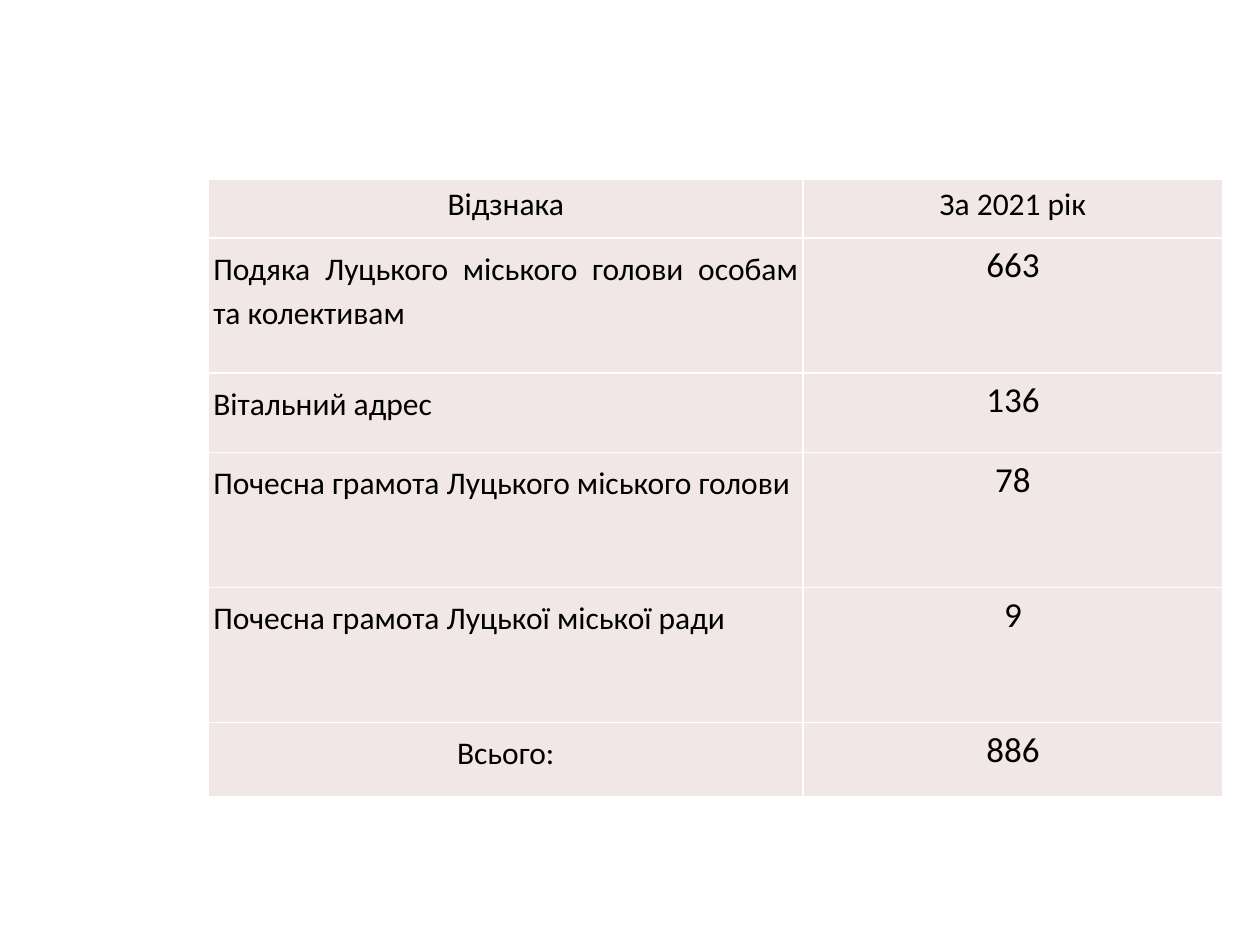
from lxml.etree import SubElement
from pptx import Presentation
from pptx.dml.color import RGBColor
from pptx.enum.text import PP_ALIGN as Align
from pptx.oxml.ns import qn
from pptx.util import Cm, Pt

COLORS = {"cell": "F1E7E7", "border": "FFFFFF", "text": "000000"}
COLUMN_WIDTHS = [11.99, 8.46]
ROW_HEIGHTS = [1.19, 2.72, 1.6, 2.72, 2.72, 1.5]
AWARDS = [
    ("Відзнака", "За 2021 рік"),
    ("Подяка Луцького міського голови особам та колективам", "663"),
    ("Вітальний адрес", "136"),
    ("Почесна грамота Луцького міського голови", "78"),
    ("Почесна грамота Луцької міської ради", "9"),
    ("Всього:", "886"),
]


def add_borders(cell):
    """Draw the four cell edges; they must come before the fill."""
    properties = cell._tc.get_or_add_tcPr()
    for side in ("a:lnL", "a:lnR", "a:lnT", "a:lnB"):
        line = SubElement(properties, qn(side), w=str(Pt(0.96)))
        fill = SubElement(line, qn("a:solidFill"))
        SubElement(fill, qn("a:srgbClr"), val=COLORS["border"])


# Page
deck = Presentation()
deck.slide_width, deck.slide_height = Cm(25.4), Cm(19.05)
page = deck.slides.add_slide(deck.slide_layouts[6])

# Table grid
table = page.shapes.add_table(
    len(AWARDS), len(COLUMN_WIDTHS), Cm(4.2), Cm(3.61),
    Cm(sum(COLUMN_WIDTHS)), Cm(sum(ROW_HEIGHTS))).table
table.first_row = table.horz_banding = False
for column, width in zip(table.columns, COLUMN_WIDTHS):
    column.width = Cm(width)
for row, height in zip(table.rows, ROW_HEIGHTS):
    row.height = Cm(height)

# Award names and counts
last_row = len(AWARDS) - 1
for row_index, texts in enumerate(AWARDS):
    for column_index, text in enumerate(texts):
        is_header = row_index == 0
        is_name = column_index == 0
        cell = table.cell(row_index, column_index)
        cell.margin_left = cell.margin_right = Cm(0.1)
        cell.margin_top = cell.margin_bottom = Cm(0.13)
        add_borders(cell)
        cell.fill.solid()
        cell.fill.fore_color.rgb = RGBColor.from_string(COLORS["cell"])

        cell.text = text
        para = cell.text_frame.paragraphs[0]
        para.alignment = Align.CENTER
        if is_name and not is_header:
            para.line_spacing = 1.15
            if row_index < last_row:
                para.alignment = Align.JUSTIFY
        para.font.name = "Calibri"
        para.font.size = Pt(18 if is_header or is_name else 20)
        para.font.bold = False
        para.font.color.rgb = RGBColor.from_string(COLORS["text"])

deck.save("out.pptx")
